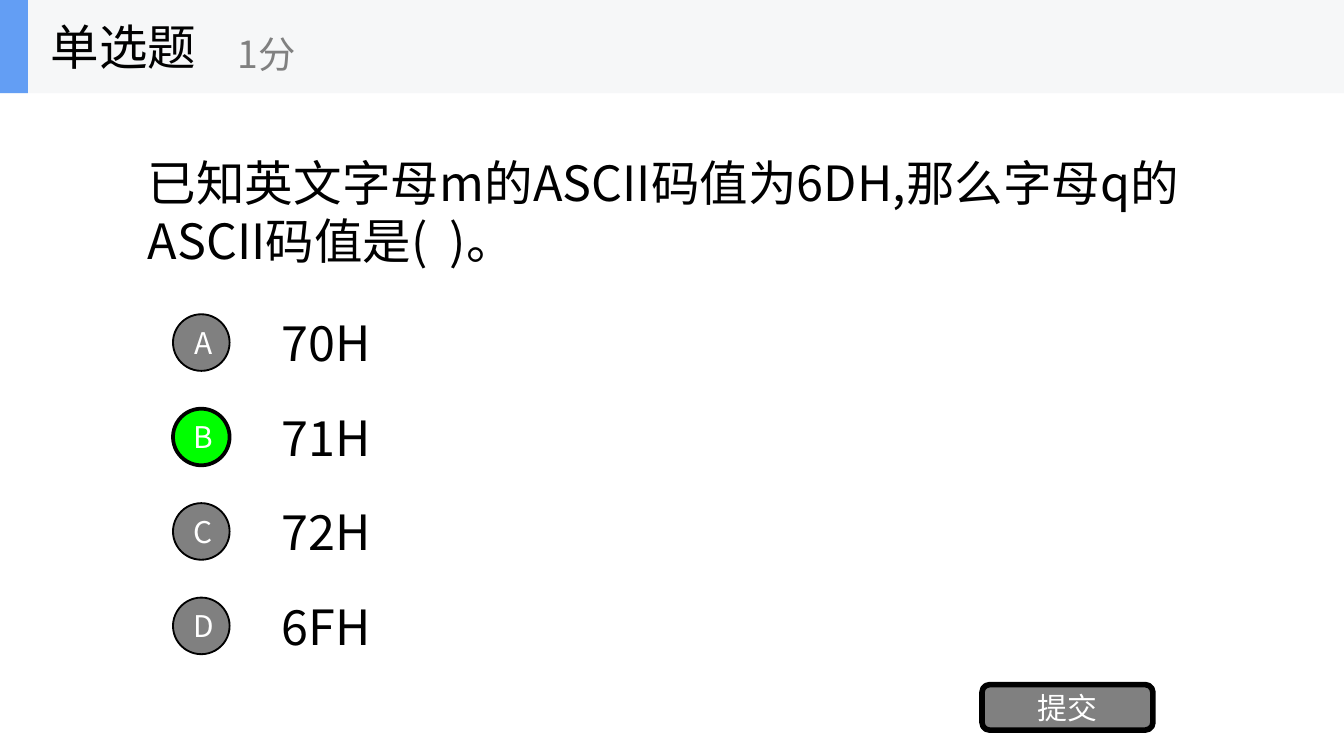
from pptx import Presentation
from pptx.dml.color import RGBColor
from pptx.enum.shapes import MSO_SHAPE
from pptx.enum.text import MSO_ANCHOR, MSO_AUTO_SIZE, PP_ALIGN
from pptx.oxml.ns import qn
from pptx.util import Cm, Pt

FONT = "Noto Sans CJK SC"
COLORS = {
    "text": "000000",
    "muted": "808080",
    "light": "FFFFFF",
    "correct": "00FF00",
    "header": "F6F7F8",
    "accent": "639EF4",
}
OPTIONS = [("A", "70H"), ("B", "71H"), ("C", "72H"), ("D", "6FH")]
CORRECT = "B"


def color(name):
    return RGBColor.from_string(COLORS[name])


def write_text(shape, text, size=26, fill="text", align=PP_ALIGN.LEFT,
               spacing=None, margin=None):
    frame = shape.text_frame
    frame.word_wrap = True
    frame.auto_size = MSO_AUTO_SIZE.NONE
    frame.vertical_anchor = MSO_ANCHOR.MIDDLE
    if margin is not None:
        frame.margin_left = frame.margin_right = Cm(margin)
        frame.margin_top = frame.margin_bottom = Cm(margin)
    paragraph = frame.paragraphs[0]
    paragraph.alignment = align
    if spacing:
        paragraph.line_spacing = Pt(spacing)
    run = paragraph.add_run()
    run.text = text
    run.font.size = Pt(size)
    run.font.name = FONT
    run.font.color.rgb = color(fill)
    properties = run.font._element
    east_asian = properties.makeelement(qn("a:ea"), {"typeface": FONT})
    properties.find(qn("a:latin")).addnext(east_asian)


def add_box(shapes, kind, left, top, width, height, fill, line_width=None):
    shape = shapes.add_shape(kind, Cm(left), Cm(top), Cm(width), Cm(height))
    shape.shadow.inherit = False
    shape.fill.solid()
    shape.fill.fore_color.rgb = color(fill)
    if line_width:
        shape.line.color.rgb = color("text")
        shape.line.width = Pt(line_width)
    else:
        shape.line.fill.background()
    return shape


def add_label(shapes, text, left, top, width, height, **style):
    label = shapes.add_textbox(Cm(left), Cm(top), Cm(width), Cm(height))
    write_text(label, text, **style)


def add_question(slide, left, top, width, height):
    title = slide.shapes.title
    title.left, title.top = Cm(left), Cm(top)
    title.width, title.height = Cm(width), Cm(height)
    write_text(title, "已知英文字母m的ASCII码值为6DH,那么字母q的ASCII码值是(  )。",
               spacing=31)


def add_options(slide, left, top, width, height):
    pitch = height / len(OPTIONS)
    label_height, diameter, label_offset = 1.35, 1.07, 1.81
    for index, (letter, answer) in enumerate(OPTIONS):
        row_top = top + index * pitch
        add_label(slide.shapes, answer, left + label_offset, row_top,
                  width - label_offset, label_height)
        is_correct = letter == CORRECT
        circle = add_box(slide.shapes, MSO_SHAPE.OVAL, left,
                         row_top + (label_height - diameter) / 2,
                         diameter, diameter,
                         "correct" if is_correct else "muted",
                         2 if is_correct else 1)
        write_text(circle, letter, size=16, fill="light",
                   align=PP_ALIGN.CENTER, margin=0)
        circle.text_frame.margin_left = Cm(0.08)


def add_submit_button(slide, left, top, width, height):
    button = add_box(slide.shapes, MSO_SHAPE.ROUNDED_RECTANGLE,
                     left, top, width, height, "muted", 3)
    write_text(button, "提交", size=16, fill="light",
               align=PP_ALIGN.CENTER, margin=0)


def add_header(slide, left, top, width, height):
    shapes = slide.shapes.add_group_shape().shapes
    add_box(shapes, MSO_SHAPE.RECTANGLE, left, top, width, height, "header")
    add_box(shapes, MSO_SHAPE.RECTANGLE, left, top, 0.53, height, "accent")
    add_label(shapes, "单选题", left + 0.71, top, 5.28, height)
    add_label(shapes, "1分", left + 4.24, top + 0.3, 6.35, height - 0.33,
              size=20, fill="muted")


def main():
    presentation = Presentation()
    presentation.slide_width = Cm(25.4)
    presentation.slide_height = presentation.slide_width * 9 // 16
    slide = presentation.slides.add_slide(presentation.slide_layouts[5])
    add_question(slide, 2.54, 2.76, 20.19, 2.46)
    add_options(slide, 3.27, 5.8, 4.38, 7.14)
    add_submit_button(slide, 18.56, 12.94, 3.23, 0.86)
    add_header(slide, 0, 0, 25.4, 1.76)
    presentation.save("out.pptx")


if __name__ == "__main__":
    main()
